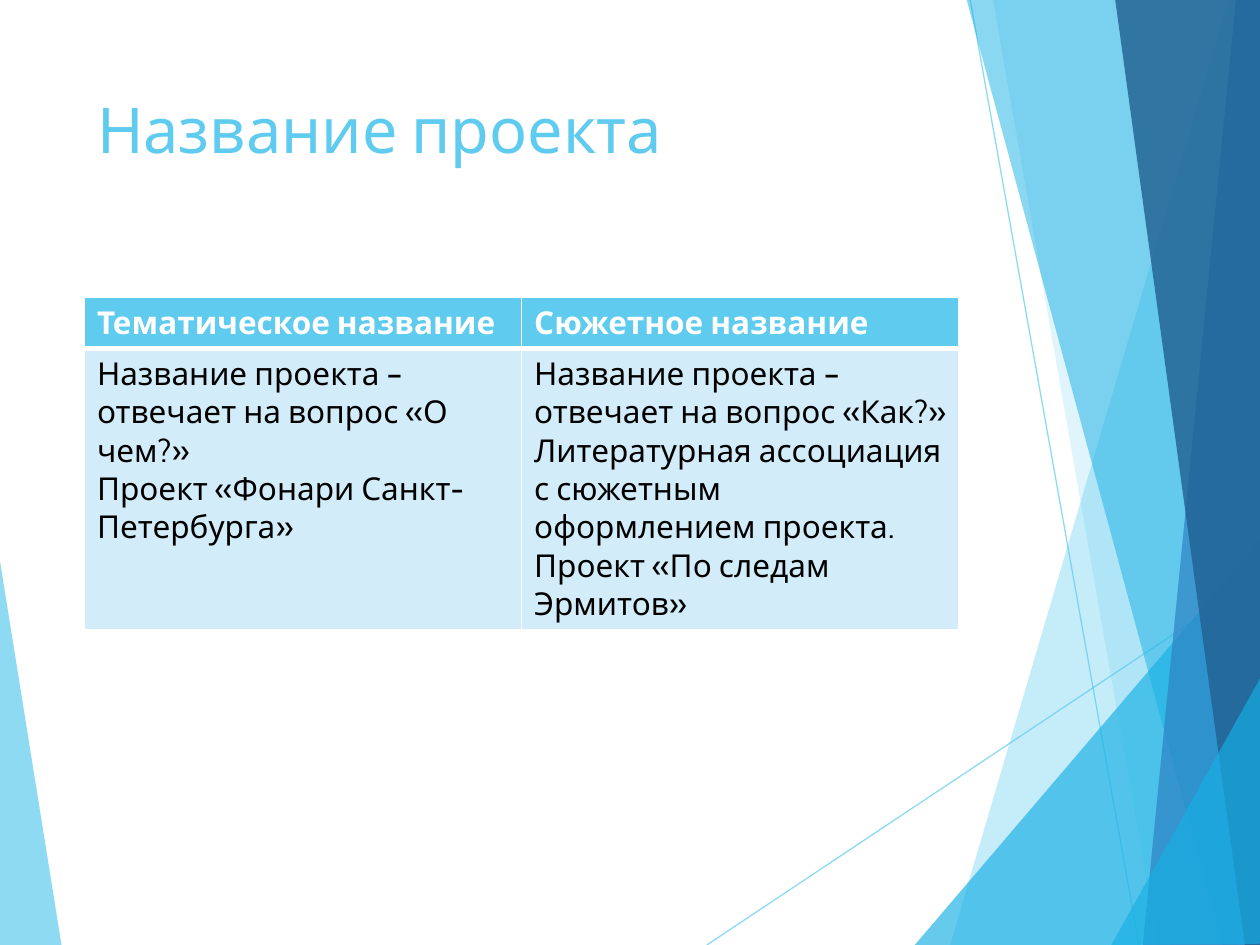
from lxml.etree import SubElement
from pptx import Presentation
from pptx.dml.color import RGBColor
from pptx.enum.shapes import MSO_CONNECTOR as Conn
from pptx.enum.text import MSO_ANCHOR as Anchor, PP_ALIGN as Align
from pptx.oxml import parse_xml
from pptx.oxml.ns import nsdecls, qn
from pptx.util import Inches, Pt

COLORS = {
    "sky": "5FCBEF", "cyan": "17B0E4", "blue": "2E83C3", "navy": "226292",
    "pale": "D2ECF9", "white": "FFFFFF", "black": "000000",
}
FONT = "Cabin"

# Facets, back to front: colour, opacity in percent, corners
FACETS = [
    ("sky", 70, [(-0.01, 4.39), (0.49, 7.51), (-0.01, 7.5)]),
    ("sky", 36, [(9.75, 0), (7.54, 7.5), (10.02, 7.51), (10.01, 0.01)]),
    ("sky", 20, [(7.88, -0.01), (9.19, 7.5), (10.01, 7.5), (10.01, -0.01)]),
    ("cyan", 66, [(7.26, 7.5), (10, 4.29), (10.01, 7.5)]),
    ("cyan", 50, [(7.67, -0.01), (9.7, 7.5), (10.01, 7.49), (10.01, -0.01)]),
    ("blue", 70, [(9.81, -0.01), (9.07, 7.5), (10.01, 7.5), (10, -0.01)]),
    ("navy", 82, [(8.85, -0.01), (9.88, 7.5), (10.02, 7.5), (10, -0.01)]),
    ("cyan", 66, [(8.82, 7.5), (10.02, 5.35), (10.02, 7.49)]),
]
RAYS = [((5.61, 7.5), (10.01, 4.57)), ((7.7, 0), (9.04, 7.5))]

ROWS = [
    ["Тематическое название", "Сюжетное название"],
    [
        "Название проекта – отвечает на вопрос «О чем?»\n"
        "Проект «Фонари Санкт-Петербурга»",
        "Название проекта – отвечает на вопрос «Как?» Литературная "
        "ассоциация с сюжетным оформлением проекта.\n"
        "Проект «По следам Эрмитов»",
    ],
]


class Deck:
    """Holds the style and the current slide."""

    def __init__(self):
        self.prs = Presentation()
        self.prs.slide_width, self.prs.slide_height = Inches(10), Inches(7.5)
        self.slide = self.prs.slides.add_slide(self.prs.slide_layouts[5])
        self.shapes = self.slide.shapes

    def paint(self, fill, color, alpha=100):
        fill.solid()
        fill.fore_color.rgb = RGBColor.from_string(COLORS[color])
        if alpha < 100:
            self.fade(fill.fore_color, alpha, fill)

    def fade(self, color, alpha, owner):
        """Set the opacity of a solid fill, in percent."""
        node = owner._xPr.find(".//" + qn("a:srgbClr"))
        SubElement(node, qn("a:alpha"), val=str(alpha * 1000))

    def style(self, frame, size, color, bold=False):
        for para in frame.paragraphs:
            para.alignment = Align.LEFT
            for run in para.runs:
                font = run.font
                font.name, font.size, font.bold = FONT, Pt(size), bold
                font.color.rgb = RGBColor.from_string(COLORS[color])

    def facet(self, color, alpha, points):
        corners = [(Inches(x), Inches(y)) for x, y in points]
        pen = self.shapes.build_freeform(*corners[0], scale=1.0)
        pen.add_line_segments(corners[1:], close=True)
        shape = pen.convert_to_shape()
        shape.shadow.inherit = False
        shape.line.fill.background()
        self.paint(shape.fill, color, alpha)

    def ray(self, start, end):
        ends = [Inches(v) for v in start + end]
        line = self.shapes.add_connector(Conn.STRAIGHT, *ends)
        line.line.width = Pt(0.75)
        self.paint(line.line.fill, "sky", 70)
        SubElement(line._element.spPr, qn("a:effectLst"))

    def title(self, text, box):
        shape = self.shapes.title
        shape.left, shape.top, shape.width, shape.height = map(Inches, box)
        frame = shape.text_frame
        frame.text = text
        frame.word_wrap = True
        frame.vertical_anchor = Anchor.TOP
        self.style(frame, 36, "sky")
        # Bring the title in front of the facets
        shape.element.getparent().append(shape.element)

    def border(self, cell, **widths):
        props = cell._tc.get_or_add_tcPr()
        for spot, (side, width) in enumerate(widths.items()):
            props.insert(spot, parse_xml(
                f'<a:ln{side} {nsdecls("a")} w="{Pt(width)}"><a:solidFill>'
                f'<a:srgbClr val="{COLORS["white"]}"/></a:solidFill></a:ln{side}>'))

    def table(self, rows, box, heights):
        size = len(rows), len(rows[0])
        table = self.shapes.add_table(*size, *map(Inches, box)).table
        for r, (texts, height) in enumerate(zip(rows, heights)):
            table.rows[r].height = Inches(height)
            head = r == 0
            for c, text in enumerate(texts):
                cell = table.cell(r, c)
                cell.text_frame.text = text
                self.style(cell.text_frame, 18, "white" if head else "black", head)
                self.paint(cell.fill, "sky" if head else "pale")
                self.border(cell, L=1, R=1, T=1 if head else 3, B=3 if head else 1)


def main():
    deck = Deck()
    back, *front = FACETS
    deck.facet(*back)
    for ray in RAYS:
        deck.ray(*ray)
    for facet in front:
        deck.facet(*facet)
    deck.title("Название проекта", (0.67, 0.67, 6.94, 1.44))
    deck.table(ROWS, (0.67, 2.36, 6.94, 2.61), (0.4, 2.21))
    deck.prs.save("out.pptx")


if __name__ == "__main__":
    main()
